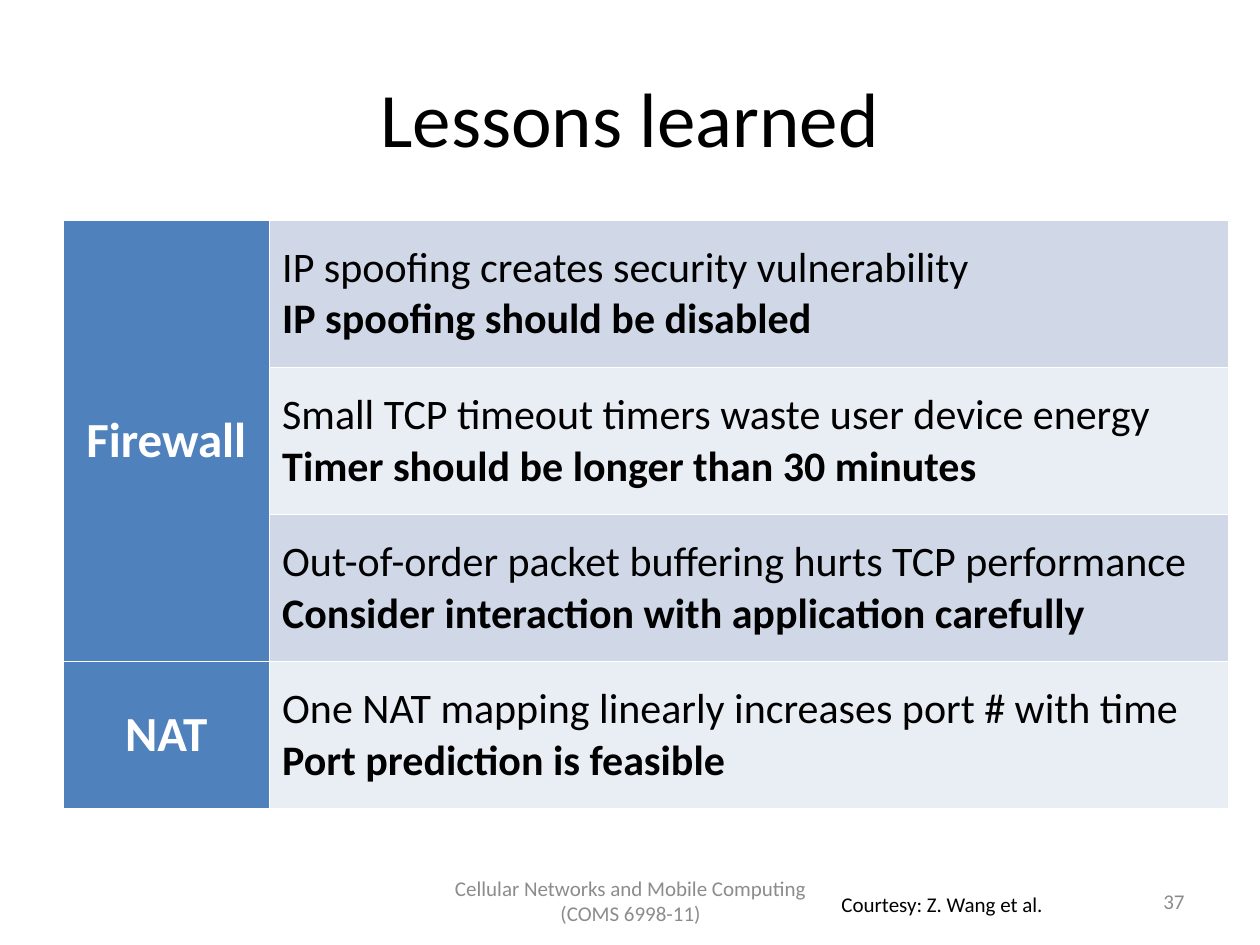
from dataclasses import dataclass

from lxml.etree import SubElement
from pptx import Presentation
from pptx.dml.color import RGBColor
from pptx.enum.text import MSO_ANCHOR as Anchor, PP_ALIGN as Align
from pptx.oxml.ns import qn
from pptx.util import Inches, Pt

WIDTH, HEIGHT = Inches(10), Inches(7.5)


@dataclass(frozen=True)
class Theme:
    font: str = "Calibri"
    ink: str = "000000"
    muted: str = "8C8C8C"
    white: str = "FFFFFF"
    header: str = "4F81BD"
    bands: tuple[str, str] = ("D0D8E8", "E9EDF4")
    title: int = 44
    group: int = 28
    body: int = 24
    small: int = 12
    border: int = 1


@dataclass(frozen=True)
class Box:
    """Position and size in inches."""
    left: float
    top: float
    width: float
    height: float

    def emu(self) -> list[int]:
        return [Inches(v) for v in (self.left, self.top, self.width, self.height)]


@dataclass(frozen=True)
class Label:
    text: str
    box: Box
    size: int
    color: str
    align: Align = Align.CENTER
    anchor: Anchor = Anchor.MIDDLE
    wrap: bool = True


@dataclass(frozen=True)
class Lesson:
    finding: str
    advice: str


T = Theme()
FOOT_TOP, FOOT_HEIGHT = 6.95, 0.4
LABELS = [
    Label("Lessons learned", Box(0.5, 0.3, 9, 1.25), T.title, T.ink),
    Label("Cellular Networks and Mobile Computing (COMS 6998-11)",
          Box(3.42, FOOT_TOP, 3.17, FOOT_HEIGHT), T.small, T.muted),
    Label("Courtesy: Z. Wang et al.", Box(6.58, 7.03, 1.83, 0.3),
          T.small, T.ink, Align.LEFT, Anchor.TOP, wrap=False),
    Label("37", Box(7.17, FOOT_TOP, 2.33, FOOT_HEIGHT), T.small, T.muted, Align.RIGHT),
]
TABLE_BOX = Box(0.5, 1.75, 9.25, 4.67)
GROUP_WIDTH = 1.64
GROUPS = {
    "Firewall": [
        Lesson("IP spoofing creates security vulnerability",
               "IP spoofing should be disabled"),
        Lesson("Small TCP timeout timers waste user device energy",
               "Timer should be longer than 30 minutes"),
        Lesson("Out-of-order packet buffering hurts TCP performance",
               "Consider interaction with application carefully"),
    ],
    "NAT": [
        Lesson("One NAT mapping linearly increases port # with time",
               "Port prediction is feasible"),
    ],
}


def style(p, size: int, color: str, align: Align = Align.LEFT, bold: bool = False) -> None:
    p.alignment = align
    p.font.name, p.font.size, p.font.bold = T.font, Pt(size), bold
    p.font.color.rgb = RGBColor.from_string(color)


def add_label(s, label: Label) -> None:
    tf = s.shapes.add_textbox(*label.box.emu()).text_frame
    tf.word_wrap, tf.vertical_anchor = label.wrap, label.anchor
    tf.text = label.text
    style(tf.paragraphs[0], label.size, label.color, label.align)


def format_cell(cell, fill: str) -> None:
    """Centre the cell vertically, give it thin white borders and fill it."""
    cell.vertical_anchor = Anchor.MIDDLE
    tc_pr = cell._tc.get_or_add_tcPr()
    for side in ("a:lnL", "a:lnR", "a:lnT", "a:lnB"):
        line = SubElement(tc_pr, qn(side), w=str(Pt(T.border)))
        SubElement(SubElement(line, qn("a:solidFill")), qn("a:srgbClr"), val=T.white)
    cell.fill.solid()
    cell.fill.fore_color.rgb = RGBColor.from_string(fill)


def fill_lesson(cell, lesson: Lesson) -> None:
    tf = cell.text_frame
    tf.text = f"{lesson.finding}\n{lesson.advice}"
    for p, bold in zip(tf.paragraphs, (False, True)):
        style(p, T.body, T.ink, bold=bold)


def add_lessons(s) -> None:
    rows = sum(map(len, GROUPS.values()))
    table = s.shapes.add_table(rows, 2, *TABLE_BOX.emu()).table
    table.columns[0].width = Inches(GROUP_WIDTH)
    table.columns[1].width = Inches(TABLE_BOX.width - GROUP_WIDTH)

    first = 0
    for name, lessons in GROUPS.items():
        for row, lesson in enumerate(lessons, first):
            format_cell(table.cell(row, 0), T.header)
            format_cell(table.cell(row, 1), T.bands[row % 2])
            fill_lesson(table.cell(row, 1), lesson)
        group = table.cell(first, 0)
        if len(lessons) > 1:
            group.merge(table.cell(first + len(lessons) - 1, 0))
        group.text = name
        style(group.text_frame.paragraphs[0], T.group, T.white, Align.CENTER, bold=True)
        first += len(lessons)


def main() -> None:
    prs = Presentation()
    prs.slide_width, prs.slide_height = WIDTH, HEIGHT
    s = prs.slides.add_slide(prs.slide_layouts[6])
    add_lessons(s)
    for label in LABELS:
        add_label(s, label)
    prs.save("out.pptx")


if __name__ == "__main__":
    main()
